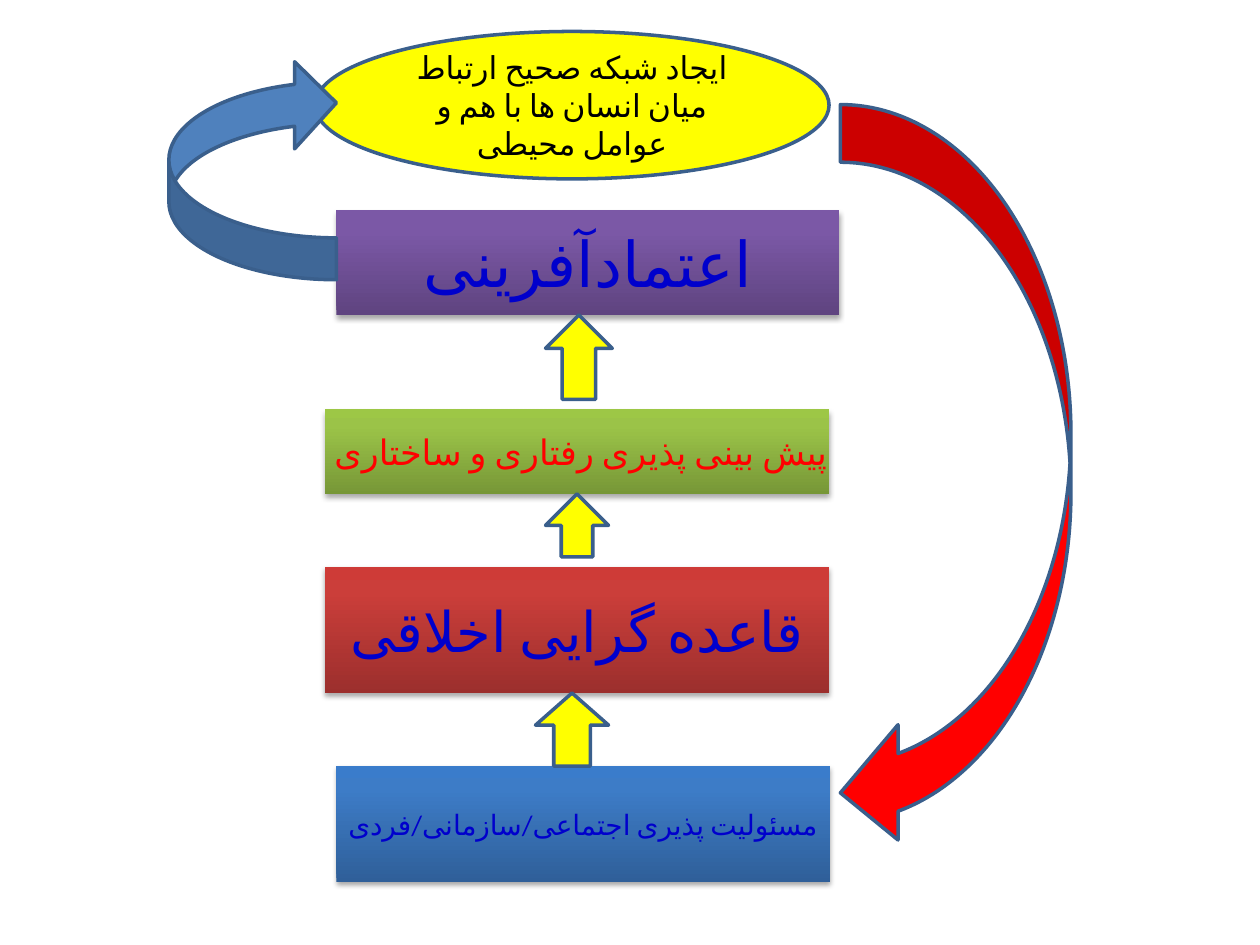
import lxml.etree
import pptx
import pptx.dml.color
import pptx.enum.lang
import pptx.enum.shapes
import pptx.enum.text
import pptx.oxml
import pptx.oxml.ns
import pptx.util

Inches = pptx.util.Inches
Pt = pptx.util.Pt
RGBColor = pptx.dml.color.RGBColor
SHAPE = pptx.enum.shapes.MSO_SHAPE

FONT = "Calibri"
BLACK = RGBColor(0x00, 0x00, 0x00)
NAVY = RGBColor(0x00, 0x00, 0xCC)
RED = RGBColor(0xFF, 0x00, 0x00)
YELLOW = RGBColor(0xFF, 0xFF, 0x00)
BLUE = RGBColor(0x4F, 0x81, 0xBD)
OUTLINE = RGBColor(0x3A, 0x5F, 0x8C)

BLUE_SHADES = (RGBColor(0x2F, 0x5F, 0x99), RGBColor(0x3D, 0x7C, 0xC7), RGBColor(0x3A, 0x7C, 0xCB))
RED_SHADES = (RGBColor(0x9C, 0x2F, 0x2D), RGBColor(0xCB, 0x3E, 0x3A), RGBColor(0xCE, 0x3B, 0x37))
GREEN_SHADES = (RGBColor(0x77, 0x97, 0x37), RGBColor(0x9B, 0xC3, 0x48), RGBColor(0x9D, 0xC7, 0x46))
PURPLE_SHADES = (RGBColor(0x5F, 0x44, 0x80), RGBColor(0x7B, 0x58, 0xA6), RGBColor(0x7C, 0x57, 0xA8))
STOPS = (0, 80, 100)

LAYERS = [
    ("مسئولیت پذیری اجتماعی/سازمانی/فردی", (2.67, 6.08, 3.92, 0.92), BLUE_SHADES, 16, NAVY),
    ("قاعده گرایی اخلاقی", (2.58, 4.5, 4, 1), RED_SHADES, 32, NAVY),
    (" پیش بینی پذیری رفتاری و ساختاری", (2.58, 3.25, 4, 0.67), GREEN_SHADES, 20, RED),
    ("اعتمادآفرینی", (2.67, 1.67, 3.99, 0.83), PURPLE_SHADES, 36, NAVY),
]

UP_ARROWS = [
    ((4.33, 2.5, 0.53, 0.67), (0.5, 0.5)),
    ((4.33, 3.92, 0.5, 0.5), (0.5, 0.5)),
    ((4.25, 5.5, 0.58, 0.58), (0.5, 0.44)),
]


def add_text(sp, text, *, size, color, wrap=True):
    tf = sp.text_frame
    tf.word_wrap = wrap
    tf.vertical_anchor = pptx.enum.text.MSO_ANCHOR.MIDDLE
    p = tf.paragraphs[0]
    p.alignment = pptx.enum.text.PP_ALIGN.CENTER
    r = p.add_run()
    r.text = text
    r.font.name = FONT
    r.font.size = Pt(size)
    r.font.color.rgb = color
    r.font.language_id = pptx.enum.lang.MSO_LANGUAGE_ID.FARSI
    lxml.etree.SubElement(r._r.rPr, pptx.oxml.ns.qn("a:cs"), typeface=FONT)


def set_gradient(sp, shades):
    sp.fill.gradient()
    sp.fill.gradient_angle = 90
    stops = sp._element.spPr.find(".//" + pptx.oxml.ns.qn("a:gsLst"))
    for stop in list(stops):
        stops.remove(stop)
    for pos, shade in zip(STOPS, shades):
        gs = lxml.etree.SubElement(stops, pptx.oxml.ns.qn("a:gs"), pos=str(pos * 1000))
        lxml.etree.SubElement(gs, pptx.oxml.ns.qn("a:srgbClr"), val=str(shade))


def set_shadow(sp):
    sp.shadow.inherit = False
    effects = sp._element.spPr.find(pptx.oxml.ns.qn("a:effectLst"))
    effects.append(pptx.oxml.parse_xml(
        f'<a:outerShdw {pptx.oxml.ns.nsdecls("a")} blurRad="{Pt(3.1)}" dist="{Pt(1.8)}"'
        ' dir="5400000" rotWithShape="0"><a:srgbClr val="000000">'
        '<a:alpha val="35000"/></a:srgbClr></a:outerShdw>'
    ))


def add_layer(slide, text, box, shades, size, color):
    sp = slide.shapes.add_shape(SHAPE.RECTANGLE, *map(Inches, box))
    set_gradient(sp, shades)
    sp.line.fill.background()
    set_shadow(sp)
    add_text(sp, text, size=size, color=color, wrap=False)


def add_outlined(slide, kind, box, fill, adjustments=(), rotation=0):
    sp = slide.shapes.add_shape(kind, *map(Inches, box))
    sp.shadow.inherit = False
    sp.fill.solid()
    sp.fill.fore_color.rgb = fill
    sp.line.color.rgb = OUTLINE
    sp.line.width = Pt(2)
    sp.rotation = rotation
    for i, value in enumerate(adjustments):
        sp.adjustments[i] = value
    return sp


def main():
    prs = pptx.Presentation()
    prs.slide_width = Inches(10)
    prs.slide_height = Inches(7.5)
    slide = prs.slides.add_slide(prs.slide_layouts[6])

    for layer in LAYERS:
        add_layer(slide, *layer)
    for box, adjustments in UP_ARROWS:
        add_outlined(slide, SHAPE.UP_ARROW, box, YELLOW, adjustments)

    goal = add_outlined(slide, SHAPE.OVAL, (2.5, 0.25, 4.08, 1.17), YELLOW)
    add_text(goal, "ایجاد شبکه صحیح ارتباط میان انسان ها با هم و عوامل محیطی", size=18, color=BLACK)

    add_outlined(slide, SHAPE.CURVED_LEFT_ARROW, (1.34, 0.47, 1.33, 1.75), BLUE,
                 (0.25, 0.52, 0.25), rotation=180)
    add_outlined(slide, SHAPE.CURVED_LEFT_ARROW, (6.67, 0.83, 1.83, 5.92), RED)

    prs.save("out.pptx")


if __name__ == "__main__":
    main()
